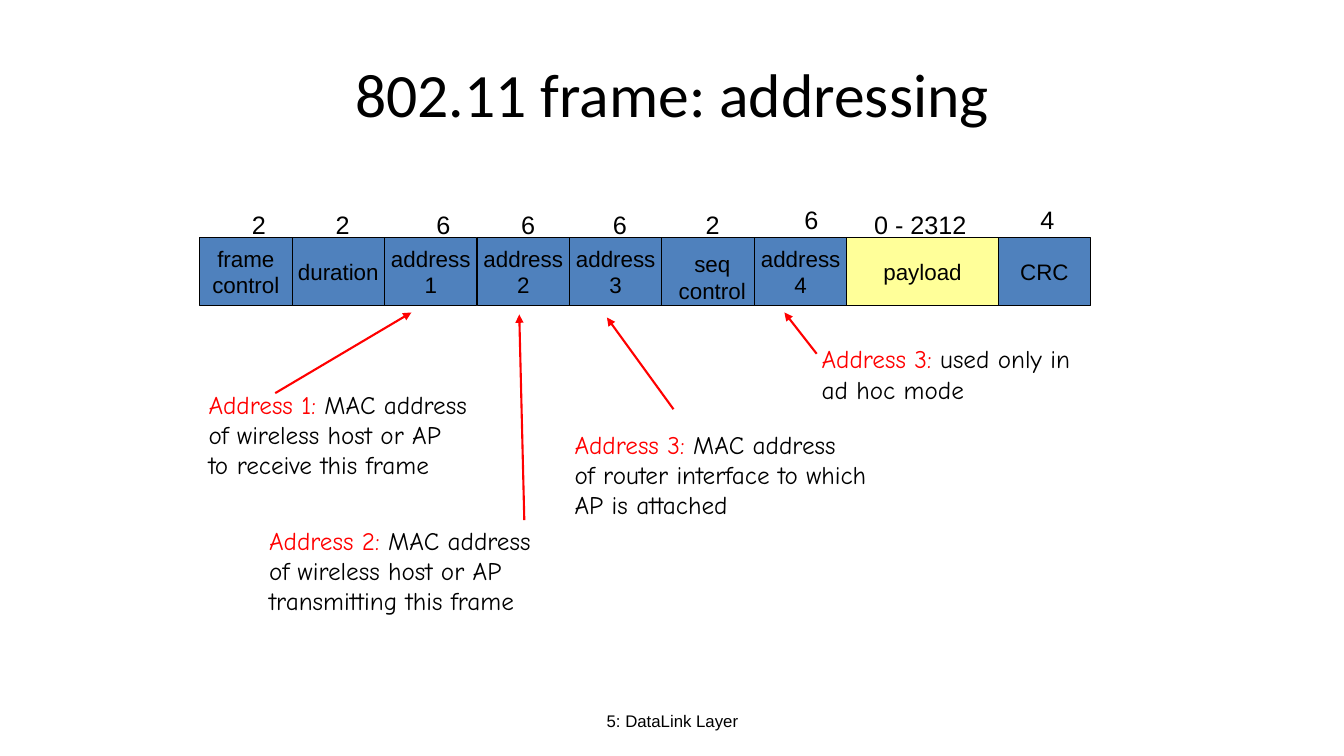
from dataclasses import dataclass

import pptx
import pptx.dml.color
import pptx.enum.dml
import pptx.enum.shapes
import pptx.enum.text
import pptx.oxml
import pptx.oxml.ns
import pptx.util
from pptx.util import Inches

ALIGN = pptx.enum.text.PP_ALIGN
ANCHOR = pptx.enum.text.MSO_ANCHOR


def rgb(value):
    return pptx.dml.color.RGBColor.from_string(value)


@dataclass(frozen=True)
class Theme:
    ink: str = "000000"
    header: str = "4F81BD"
    payload: str = "FFFF99"
    accent: str = "FF0000"
    title_font: str = "Calibri"
    frame_font: str = "Arial"
    note_font: str = "Comic Neue"
    title_size: int = 44
    note_size: int = 18
    field_size: int = 16
    footer_size: int = 12
    border: float = 0.75
    arrow: float = 1.5


THEME = Theme()
FRAME_LEFT, FRAME_TOP, FRAME_HEIGHT = 1.98, 2.36, 0.67
FIELD_WIDTH = (8.4 - FRAME_LEFT) / 7
PAYLOAD_WIDTH = 1.5

FIELDS = [
    ["frame", "control"],
    ["duration"],
    ["address", "1"],
    ["address", "2"],
    ["address", "3"],
    [],
    ["address", "4"],
    ["payload"],
    ["CRC"],
]

BYTE_COUNTS = [
    ("2", 2.4, 2.03, 0.34),
    ("2", 3.23, 2.03, 0.34),
    ("6", 4.23, 2.03, 0.34),
    ("6", 5.07, 2.03, 0.34),
    ("6", 5.98, 2.03, 0.34),
    ("2", 6.9, 2.03, 0.34),
    ("6", 7.88, 1.98, 0.34),
    ("0 - 2312", 8.57, 2.03, 1.12),
    ("4", 10.22, 1.98, 0.34),
]

NOTES = [
    ((2.57, 5.16, 3.11, 1), "Address 2:",
     [" MAC address", "of wireless host or AP", "transmitting this frame"]),
    ((1.97, 3.81, 3.07, 1), "Address 1:",
     [" MAC address", "of wireless host or AP", "to receive this frame"]),
    ((5.6, 4.21, 3.34, 1), "Address 3:",
     [" MAC address", "of router interface to which AP is attached"]),
    ((8.05, 3.36, 2.85, 0.7), "Address 3:", [" used only in ad hoc mode"]),
]

ARROWS = [
    ((2.73, 3.9), (4.08, 3.1)),
    ((5.2, 5.16), (5.15, 3.12)),
    ((6.68, 4.06), (6.02, 3.15)),
    ((8.1, 3.51), (7.78, 3.1)),
]


def style(paragraph, font, size, align):
    paragraph.alignment = align
    paragraph.font.name = font
    paragraph.font.size = pptx.util.Pt(size)
    paragraph.font.color.rgb = rgb(THEME.ink)


def write_lines(frame, lines, font, size, align):
    for index, line in enumerate(lines):
        paragraph = frame.add_paragraph() if index else frame.paragraphs[0]
        style(paragraph, font, size, align)
        paragraph.add_run().text = line


def add_label(slide, box, lines, font, size, align=ALIGN.CENTER,
              anchor=ANCHOR.TOP, wrap=False):
    frame = slide.shapes.add_textbox(*map(Inches, box)).text_frame
    frame.word_wrap = wrap
    frame.vertical_anchor = anchor
    write_lines(frame, lines, font, size, align)
    return frame


def add_field(slide, left, width, lines, fill):
    field = slide.shapes.add_shape(
        pptx.enum.shapes.MSO_SHAPE.RECTANGLE,
        Inches(left), Inches(FRAME_TOP), Inches(width), Inches(FRAME_HEIGHT))
    field.shadow.inherit = False
    field.fill.solid()
    field.fill.fore_color.rgb = rgb(fill)
    field.line.color.rgb = rgb(THEME.ink)
    field.line.width = pptx.util.Pt(THEME.border)
    field.text_frame.word_wrap = False
    field.text_frame.vertical_anchor = ANCHOR.MIDDLE
    write_lines(field.text_frame, lines, THEME.frame_font, THEME.field_size,
                ALIGN.CENTER)


def add_frame(slide):
    left = FRAME_LEFT
    for lines in FIELDS:
        is_payload = lines == ["payload"]
        width = PAYLOAD_WIDTH if is_payload else FIELD_WIDTH
        add_field(slide, left, width, lines,
                  THEME.payload if is_payload else THEME.header)
        left += width


def add_note(slide, box, heading, lines):
    frame = add_label(slide, box, [heading] + lines[1:], THEME.note_font,
                      THEME.note_size, ALIGN.LEFT, wrap=True)
    first = frame.paragraphs[0]
    first.runs[0].font.color.rgb = rgb(THEME.accent)
    first.add_run().text = lines[0]


def add_arrow(slide, start, end):
    arrow = slide.shapes.add_connector(
        pptx.enum.shapes.MSO_CONNECTOR.STRAIGHT, *map(Inches, start + end))
    arrow.line.color.rgb = rgb(THEME.accent)
    arrow.line.width = pptx.util.Pt(THEME.arrow)
    head = pptx.oxml.parse_xml(
        f'<a:tailEnd {pptx.oxml.ns.nsdecls("a")} type="triangle"/>')
    arrow.line._get_or_add_ln().append(head)
    arrow._element.spPr.append(
        pptx.oxml.parse_xml(f'<a:effectLst {pptx.oxml.ns.nsdecls("a")}/>'))


def main():
    deck = pptx.Presentation()
    deck.slide_width, deck.slide_height = Inches(13.33), Inches(7.5)
    slide = deck.slides.add_slide(deck.slide_layouts[6])
    add_label(slide, (0.67, 0.3, 12, 1.25), ["802.11 frame: addressing"],
              THEME.title_font, THEME.title_size, anchor=ANCHOR.MIDDLE, wrap=True)
    add_label(slide, (4.56, 6.95, 4.22, 0.4), ["5: DataLink Layer"],
              THEME.frame_font, THEME.footer_size, anchor=ANCHOR.MIDDLE, wrap=True)
    add_frame(slide)
    for count, left, top, width in BYTE_COUNTS:
        add_label(slide, (left, top, width, 0.4), [count], THEME.frame_font,
                  THEME.note_size, ALIGN.LEFT)
    add_label(slide, (6.63, 2.43, 0.87, 0.64), ["seq", "control"],
              THEME.frame_font, THEME.field_size)
    for box, heading, lines in NOTES:
        add_note(slide, box, heading, lines)
    for start, end in ARROWS:
        add_arrow(slide, start, end)
    deck.save("out.pptx")


if __name__ == "__main__":
    main()
